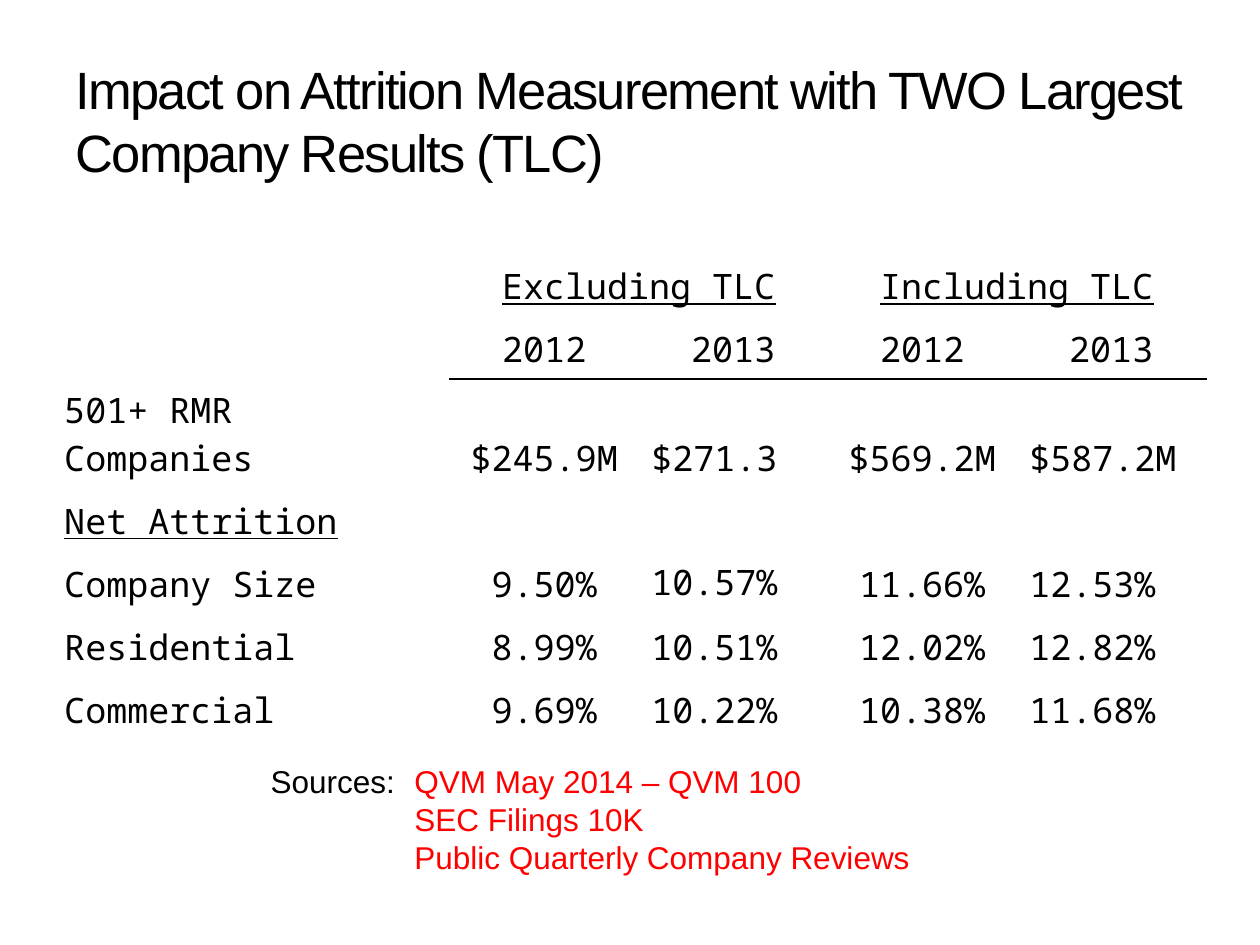
from dataclasses import dataclass

from lxml.etree import SubElement
from pptx import Presentation
from pptx.dml.color import RGBColor
from pptx.enum.text import MSO_ANCHOR as Anchor, PP_ALIGN as Align
from pptx.oxml import parse_xml
from pptx.oxml.ns import nsdecls, qn
from pptx.util import Inches, Pt

COLORS = {"text": "000000", "source": "FF0000"}
SANS, MONO = "Arial", "Noto Sans Mono"
LABEL_W, VALUE_W = 3.16, 1.5
HEAD_H, ROW_H = 0.67, 0.5
SOURCE_TAB = 1.14


@dataclass
class Row:
    label: str
    values: tuple[str, ...] = ()
    underline: bool = False


ROWS = [
    Row("", ("Excluding TLC", "", "Including TLC", ""), underline=True),
    Row("", ("2012", "2013") * 2),
    Row("501+ RMR Companies", ("$245.9M", "$271.3", "$569.2M", "$587.2M")),
    Row("Net Attrition", underline=True),
    Row("Company Size", ("9.50%", "10.57%", "11.66%", "12.53%")),
    Row("Residential", ("8.99%", "10.51%", "12.02%", "12.82%")),
    Row("Commercial", ("9.69%", "10.22%", "10.38%", "11.68%")),
]
YEAR_ROW = 1
SOURCES = ["QVM May 2014 – QVM 100", "SEC Filings 10K", "Public Quarterly Company Reviews"]


def style(r, font: str, size: int, color: str = "text") -> None:
    r.font.name, r.font.size = font, Pt(size)
    r.font.color.rgb = RGBColor.from_string(COLORS[color])


def add_rule(cell, side: str) -> None:
    """Draw a 1 pt border on the side "T" or "B" of a cell."""
    cell._tc.get_or_add_tcPr().insert(0, parse_xml(
        f'<a:ln{side} {nsdecls("a")} w="12700"><a:solidFill>'
        f'<a:srgbClr val="{COLORS["text"]}"/></a:solidFill></a:ln{side}>'))


def space_before(p, percent: int) -> None:
    spacing = SubElement(p._p.get_or_add_pPr(), qn("a:spcBef"))
    SubElement(spacing, qn("a:spcPct")).set("val", str(percent * 1000))


def fill_cell(cell, text: str, underline: bool, left: bool, spaced: bool) -> None:
    cell.fill.background()
    cell.vertical_anchor = Anchor.BOTTOM
    if not text:
        return
    p = cell.text_frame.paragraphs[0]
    p.text = text
    p.alignment = Align.LEFT if left else Align.CENTER
    if spaced:
        space_before(p, 20)
    style(p.runs[0], MONO, 20)
    p.runs[0].font.underline = underline


def add_title(s, text: str) -> None:
    sp = s.shapes.title
    sp.left, sp.top, sp.width, sp.height = map(Inches, (0.5, 0.33, 9, 1.25))
    tf = sp.text_frame
    tf.text = text
    tf.vertical_anchor = Anchor.MIDDLE
    p = tf.paragraphs[0]
    p.alignment = Align.LEFT
    style(p.runs[0], SANS, 30)
    p.runs[0]._r.get_or_add_rPr().set("spc", "-100")


def add_attrition_table(s) -> None:
    height = HEAD_H + ROW_H * (len(ROWS) - 1)
    table = s.shapes.add_table(len(ROWS), 5, Inches(0.41), Inches(1.84),
                               Inches(LABEL_W + 4 * VALUE_W), Inches(height)).table
    table.first_row = table.horz_banding = False
    for i, column in enumerate(table.columns):
        column.width = Inches(VALUE_W if i else LABEL_W)
    for i, row in enumerate(ROWS):
        table.rows[i].height = Inches(ROW_H if i else HEAD_H)
        values = row.values or ("",) * 4
        for j, text in enumerate((row.label, *values)):
            cell = table.cell(i, j)
            figure_2013 = i > YEAR_ROW and j in (2, 4)
            fill_cell(cell, text, row.underline, j == 0 or figure_2013, not figure_2013)
            if j and i in (YEAR_ROW, YEAR_ROW + 1):
                add_rule(cell, "B" if i == YEAR_ROW else "T")
    for j in (1, 3):
        table.cell(0, j).merge(table.cell(0, j + 1))
    table.cell(4, 2).vertical_anchor = Anchor.MIDDLE


def add_sources(s) -> None:
    tf = s.shapes.add_textbox(*map(Inches, (2.05, 6, 7.22, 1))).text_frame
    tf.word_wrap = True
    for i, source in enumerate(SOURCES):
        p = tf.add_paragraph() if i else tf.paragraphs[0]
        tabs = SubElement(p._p.get_or_add_pPr(), qn("a:tabLst"))
        tab = SubElement(tabs, qn("a:tab"))
        tab.set("pos", str(Inches(SOURCE_TAB)))
        tab.set("algn", "l")
        for text, color in (("" if i else "Sources:", "text"), ("\t" + source, "source")):
            if text:
                r = p.add_run()
                r.text = text
                style(r, SANS, 18, color)


def main() -> None:
    prs = Presentation()
    prs.slide_width, prs.slide_height = Inches(10), Inches(7.5)
    s = prs.slides.add_slide(prs.slide_layouts[5])
    add_title(s, "Impact on Attrition Measurement with TWO Largest Company Results (TLC)")
    add_attrition_table(s)
    add_sources(s)
    prs.save("out.pptx")


if __name__ == "__main__":
    main()
